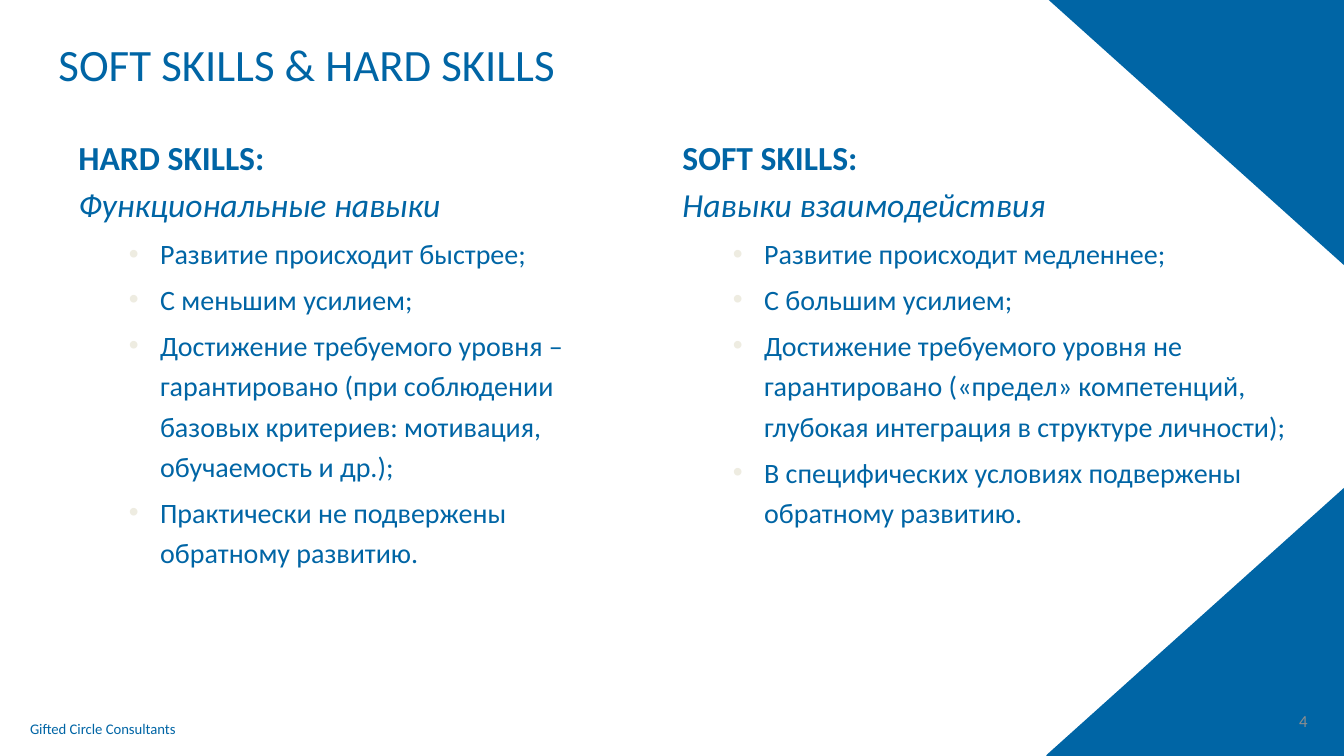
from lxml.etree import SubElement
from pptx import Presentation
from pptx.dml.color import RGBColor
from pptx.enum.shapes import MSO_SHAPE as Preset
from pptx.enum.text import MSO_ANCHOR as Anchor, PP_ALIGN as Align
from pptx.oxml.ns import qn
from pptx.util import Inches, Pt


def paint(target, color):
    target.rgb = RGBColor.from_string(color)


class SkillsSlide:
    """Holds the style and the current slide; lengths are percentages of its size."""

    font, blue, grey, cream = "Calibri", "0065A5", "8E8E8E", "EEECE1"

    def __init__(self, deck):
        self.width, self.height = deck.slide_width, deck.slide_height
        self.slide = deck.slides.add_slide(deck.slide_layouts[5])

    def box(self, left, top, width, height):
        return (int(left * self.width / 100), int(top * self.height / 100),
                int(width * self.width / 100), int(height * self.height / 100))

    def add_words(self, paragraph, wording, size, color=None, bold=False, italic=False):
        run = paragraph.add_run()
        run.text = wording
        run.font.name, run.font.size = self.font, Pt(size)
        run.font.bold, run.font.italic = bold, italic
        paint(run.font.color, color or self.blue)

    def frame(self, area, margin=True, anchor=Anchor.TOP):
        return self.setup(self.slide.shapes.add_textbox(*self.box(*area)), margin, anchor)

    def setup(self, holder, margin, anchor):
        frame = holder.text_frame
        frame.word_wrap, frame.vertical_anchor = True, anchor
        if not margin:
            frame.margin_left = frame.margin_right = 0
            frame.margin_top = frame.margin_bottom = 0
        return frame

    def title(self, wording, area):
        title = self.slide.shapes.title
        title.left, title.top, title.width, title.height = self.box(*area)
        paragraph = self.setup(title, False, Anchor.TOP).paragraphs[0]
        paragraph.alignment = Align.LEFT
        self.add_words(paragraph, wording, 32)

    def corner(self, area, flipped=False):
        corner = self.slide.shapes.add_shape(Preset.RIGHT_TRIANGLE, *self.box(*area))
        corner.shadow.inherit = False
        corner.rotation = 180
        if flipped:
            corner._element.spPr.find(qn("a:xfrm")).set("flipV", "1")
        corner.fill.solid()
        paint(corner.fill.fore_color, self.blue)
        paint(corner.line.color, self.blue)
        corner.line.width = Pt(2)

    def bullet(self, paragraph):
        paragraph.level, paragraph.line_spacing = 1, 1.2
        properties = paragraph._p.get_or_add_pPr()
        properties.set("marL", str(Inches(0.81)))
        properties.set("indent", str(-Inches(0.31)))
        tint = SubElement(properties, qn("a:buClr"))
        SubElement(tint, qn("a:srgbClr")).set("val", self.cream)
        SubElement(properties, qn("a:buFont")).set("typeface", "Arial")
        SubElement(properties, qn("a:buChar")).set("char", "•")

    def skills(self, heading, subtitle, traits, left, width):
        frame = self.frame((left, 17.47, width, 62.93))
        self.add_words(frame.paragraphs[0], heading, 24, bold=True)
        kind = frame.add_paragraph()
        kind.space_before = Pt(4.8)
        self.add_words(kind, subtitle, 24, italic=True)
        for trait in traits:
            paragraph = frame.add_paragraph()
            paragraph.space_before = Pt(4)
            self.bullet(paragraph)
            self.add_words(paragraph, trait, 20)

    def footer(self, wording, area):
        self.add_words(self.frame(area).paragraphs[0], wording, 10.5)

    def page_number(self, number, area):
        paragraph = self.frame(area, False, Anchor.MIDDLE).paragraphs[0]
        paragraph.alignment = Align.RIGHT
        self.add_words(paragraph, number, 12, self.grey)


def main():
    deck = Presentation()
    deck.slide_width, deck.slide_height = Inches(13.33), Inches(7.5)
    page = SkillsSlide(deck)
    page.footer("Gifted Circle Consultants", (1.5, 94.53, 22.5, 3.73))
    page.corner((77.94, 64.67, 22.13, 35.33), flipped=True)
    page.title("SOFT SKILLS & HARD SKILLS", (4.35, 4.8, 63.84, 7.2))
    page.skills("HARD SKILLS:", "Функциональные навыки", [
        "Развитие происходит быстрее;",
        "С меньшим усилием;",
        "Достижение требуемого уровня – гарантировано (при соблюдении "
        "базовых критериев: мотивация, обучаемость и др.);",
        "Практически не подвержены обратному развитию.",
    ], 5.1, 43.14)
    page.skills("SOFT SKILLS:", "Навыки взаимодействия", [
        "Развитие происходит медленнее;",
        "С большим усилием;",
        "Достижение требуемого уровня не гарантировано («предел» "
        "компетенций, глубокая интеграция в структуре личности);",
        "В специфических условиях подвержены обратному развитию.",
    ], 50.04, 46.59)
    page.corner((78.02, -0.27, 22.13, 35.33))
    page.page_number("4", (73.97, 92.67, 23.33, 5.33))
    deck.save("out.pptx")


if __name__ == "__main__":
    main()
